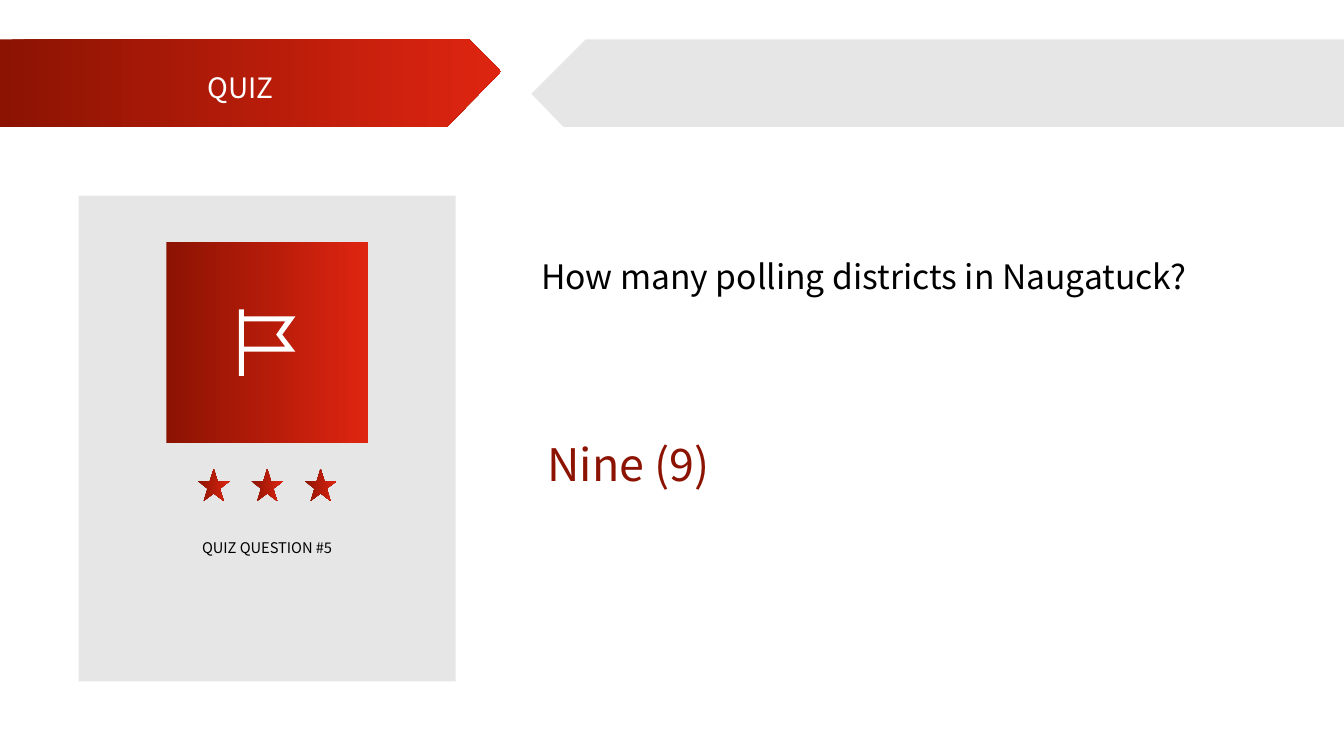
from dataclasses import dataclass

from pptx import Presentation
from pptx.dml.color import RGBColor
from pptx.enum.shapes import MSO_SHAPE
from pptx.enum.text import MSO_ANCHOR, PP_ALIGN
from pptx.util import Inches, Pt

RECTANGLE, STAR = MSO_SHAPE.RECTANGLE, MSO_SHAPE.STAR_5_POINT
LEFT, CENTER, TOP = PP_ALIGN.LEFT, PP_ALIGN.CENTER, MSO_ANCHOR.TOP


@dataclass(frozen=True)
class Theme:
    font: str = "Noto Sans CJK SC"
    red: tuple = ("8C1302", "DE2511")  # left to right gradient
    grey: str = "E7E6E6"
    white: str = "FFFFFF"
    black: str = "000000"
    heading: float = 20
    question: float = 24
    answer: float = 32
    label: float = 10.5


THEME = Theme()


def paint(fill, color):
    """Fill with one colour, or with a horizontal gradient for a pair."""
    if isinstance(color, str):
        fill.solid()
        fill.fore_color.rgb = RGBColor.from_string(color)
        return
    fill.gradient()
    fill.gradient_angle = 0
    for position, (stop, shade) in enumerate(zip(fill.gradient_stops, color)):
        stop.position = position
        stop.color.rgb = RGBColor.from_string(shade)


def write(box, text, *, at, size, color, align=LEFT, spacing=1.0):
    """Place a text holder and set its single formatted paragraph."""
    box.left, box.top, box.width, box.height = map(Inches, at)
    frame = box.text_frame
    frame.word_wrap = True
    frame.vertical_anchor = TOP
    para = frame.paragraphs[0]
    para.alignment = align
    para.line_spacing = spacing
    span = para.add_run()
    span.text = text
    span.font.name = THEME.font
    span.font.size = Pt(size)
    paint(span.font.fill, color)


deck = Presentation()
deck.slide_width, deck.slide_height = Inches(13.33), Inches(7.5)
page = deck.slides.add_slide(deck.slide_layouts[5])
shapes = page.shapes

# Outlines: each is a list of closed contours
red_banner = [[(0, 0.39), (4.65, 0.39), (4.97, 0.71), (4.43, 1.26), (0, 1.26)]]
grey_banner = [[(5.81, 0.39), (13.33, 0.39), (13.33, 1.26), (5.59, 1.26), (5.27, 0.93)]]
flag = [
    [(2.83, 3.44), (2.42, 3.44), (2.42, 3.19), (2.83, 3.19), (2.74, 3.32)],
    [(2.93, 3.14), (2.42, 3.14), (2.42, 3.07), (2.37, 3.07), (2.37, 3.73),
     (2.42, 3.73), (2.42, 3.49), (2.93, 3.49), (2.8, 3.32)],
]

# Card, flag tile and row of stars
blocks = [
    (RECTANGLE, (0.78, 1.94, 3.74, 4.82), THEME.grey),
    (RECTANGLE, (1.65, 2.4, 2, 2), THEME.red),
]
for star in range(3):
    blocks.append((STAR, (1.96 + 0.53 * star, 4.65, 0.32, 0.32), THEME.red))
for kind, at, color in blocks:
    block = shapes.add_shape(kind, *map(Inches, at))
    block.shadow.inherit = False
    block.line.fill.background()
    paint(block.fill, color)

# Banners and flag
for contours, color in [(red_banner, THEME.red), (grey_banner, THEME.grey), (flag, THEME.white)]:
    points = [[(Inches(x), Inches(y)) for x, y in contour] for contour in contours]
    builder = shapes.build_freeform(*points[0][0])
    builder.add_line_segments(points[0][1:], close=True)
    for contour in points[1:]:
        builder.move_to(*contour[0])
        builder.add_line_segments(contour[1:], close=True)
    outline = builder.convert_to_shape()
    outline.shadow.inherit = False
    outline.line.fill.background()
    paint(outline.fill, color)

# Title, brought in front of its banner
title = shapes.title
shapes.element.append(title.element)
write(title, "QUIZ", at=(1.96, 0.55, 2.03, 0.54),
      size=THEME.heading, color=THEME.white, spacing=1.3)

# Card label, answer and question
texts = [
    ("QUIZ QUESTION #5", dict(at=(1.17, 5.22, 2.96, 0.36), size=THEME.label,
                              color=THEME.black, align=CENTER, spacing=1.45)),
    ("Nine (9)", dict(at=(5.33, 4.28, 5.48, 0.64), size=THEME.answer, color=THEME.red)),
    ("How many polling districts in Naugatuck?",
     dict(at=(5.27, 2.31, 7.33, 0.69), size=THEME.question,
          color=THEME.black, spacing=1.45)),
]
for text, style in texts:
    write(shapes.add_textbox(0, 0, 0, 0), text, **style)

deck.save("out.pptx")
